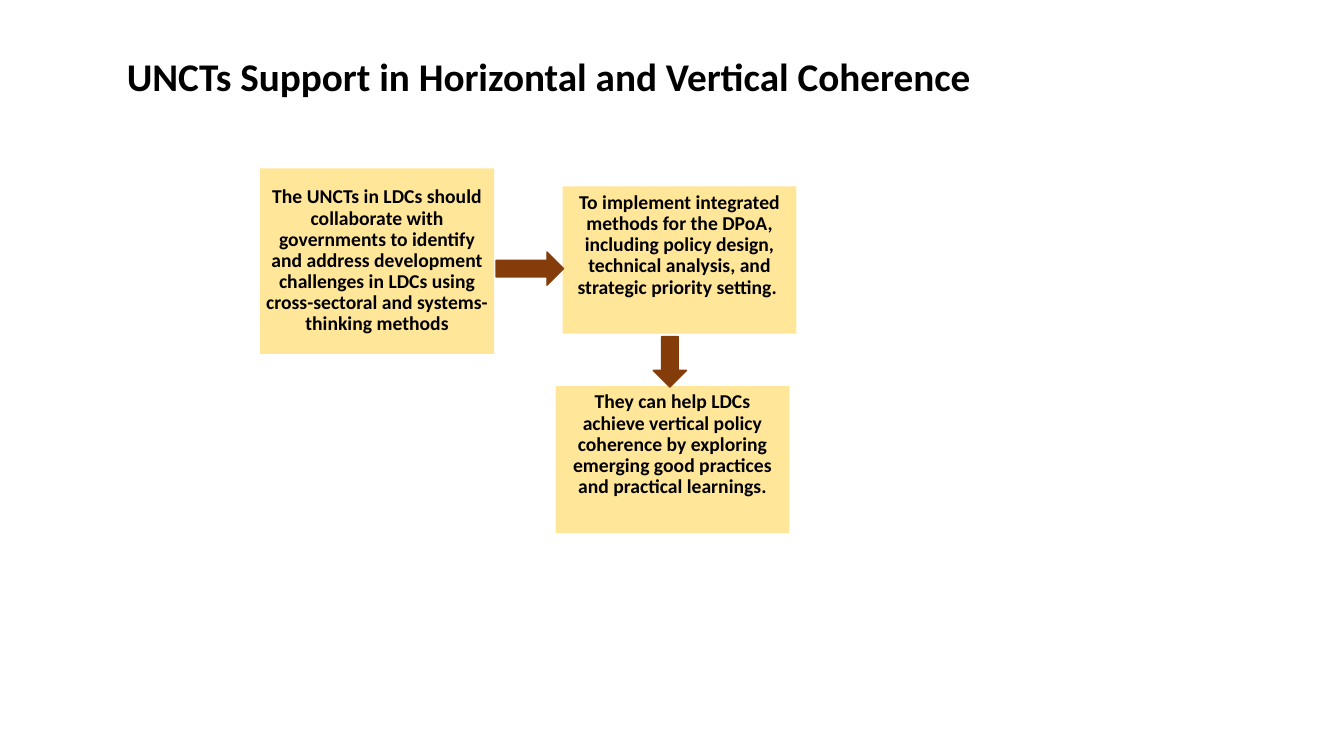
from dataclasses import dataclass

from pptx import Presentation
from pptx.dml.color import RGBColor
from pptx.enum.shapes import MSO_SHAPE
from pptx.enum.text import MSO_ANCHOR, PP_ALIGN
from pptx.util import Inches, Pt

RECT, RIGHT, DOWN = MSO_SHAPE.RECTANGLE, MSO_SHAPE.RIGHT_ARROW, MSO_SHAPE.DOWN_ARROW
TOP, MIDDLE = MSO_ANCHOR.TOP, MSO_ANCHOR.MIDDLE
LEFT, CENTER = PP_ALIGN.LEFT, PP_ALIGN.CENTER


@dataclass(frozen=True)
class Theme:
    """Colours, font and type sizes of the slide."""
    font: str = "Calibri"
    text: str = "000000"
    step: str = "FFE699"
    arrow: str = "843C0B"
    title_size: int = 28
    step_size: int = 14


THEME = Theme()
TITLE = "UNCTs Support in Horizontal and Vertical Coherence"
STEPS = [
    ("The UNCTs in LDCs should collaborate with governments to identify and address "
     "development challenges in LDCs using cross-sectoral and systems-thinking methods",
     (0, 0, 2.32, 1.84), MIDDLE),
    ("To implement integrated methods for the DPoA, including policy design, "
     "technical analysis, and strategic priority setting. ",
     (3, 0.18, 2.32, 1.46), TOP),
    ("They can help LDCs achieve vertical policy coherence by exploring emerging "
     "good practices and practical learnings.",
     (2.93, 2.16, 2.32, 1.46), TOP),
]
ARROWS = [(RIGHT, (2.34, 0.83, 0.67, 0.33)), (DOWN, (3.9, 1.67, 0.33, 0.5))]


def write_text(sp, text, *, size, align=LEFT, anchor=MIDDLE, inset=None):
    """Write bold text into a shape with the given format."""
    tf = sp.text_frame
    tf.word_wrap = True
    tf.vertical_anchor = anchor
    if inset is not None:
        tf.margin_left = tf.margin_right = Inches(inset)
        tf.margin_top = tf.margin_bottom = Inches(inset)
    p = tf.paragraphs[0]
    p.alignment = align
    p.line_spacing = 0.9
    r = p.add_run()
    r.text = text
    r.font.name = THEME.font
    r.font.size = Pt(size)
    r.font.bold = True
    r.font.color.rgb = RGBColor.from_string(THEME.text)


def add_block(s, kind, box, color, outlined=False):
    """Add a flat filled shape, with a line of the same colour if outlined."""
    sp = s.shapes.add_shape(kind, *map(Inches, box))
    sp.shadow.inherit = False
    sp.fill.solid()
    sp.fill.fore_color.rgb = RGBColor.from_string(color)
    if outlined:
        sp.line.color.rgb = RGBColor.from_string(color)
        sp.line.width = Pt(1)
    else:
        sp.line.fill.background()
    return sp


def add_title(s, box):
    """Place the slide title in the box."""
    sp = s.shapes.add_textbox(*map(Inches, box))
    write_text(sp, TITLE, size=THEME.title_size)


def add_flow(s, left, top):
    """Place the steps and the arrows between them from the given corner."""
    for text, (x, y, w, h), anchor in STEPS:
        sp = add_block(s, RECT, (left + x, top + y, w, h), THEME.step)
        write_text(sp, text, size=THEME.step_size, align=CENTER, anchor=anchor, inset=0.06)
    for kind, (x, y, w, h) in ARROWS:
        add_block(s, kind, (left + x, top + y, w, h), THEME.arrow, outlined=True)


def main():
    """Build the slide and save it."""
    prs = Presentation()
    prs.slide_width, prs.slide_height = Inches(13.33), Inches(7.5)
    s = prs.slides.add_slide(prs.slide_layouts[6])
    add_title(s, (1.16, 0.52, 10.75, 0.53))
    add_flow(s, 2.58, 1.67)
    prs.save("out.pptx")


if __name__ == "__main__":
    main()
